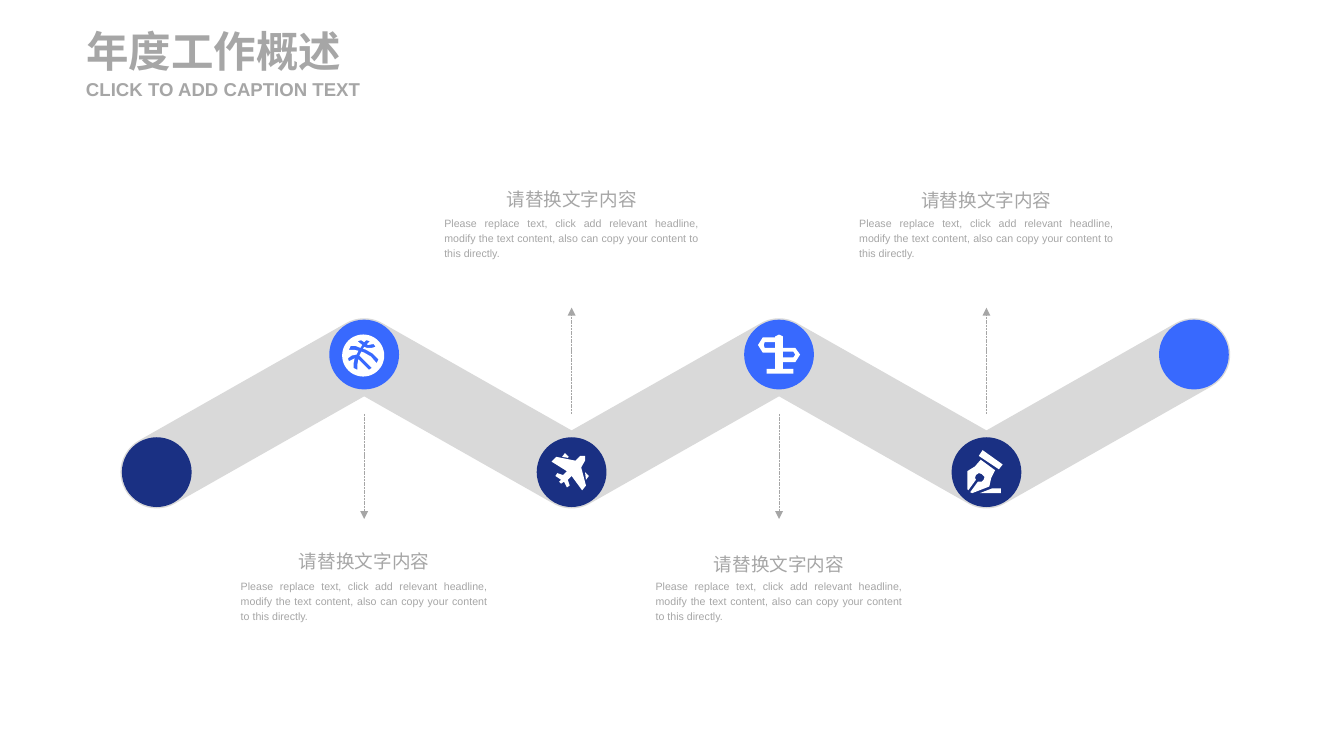
"""Build the annual work overview slide with a zigzag road and four captions."""
import math

import pptx
import pptx.dml.color
import pptx.enum.dml
import pptx.enum.shapes
import pptx.enum.text
import pptx.oxml
import pptx.oxml.ns
import pptx.util

Inches = pptx.util.Inches
Align = pptx.enum.text.PP_ALIGN
COLOURS = {"grey": "A6A6A6", "road": "D9D9D9", "navy": "1A3083", "blue": "3869FE", "white": "FFFFFF"}
HEADING = "请替换文字内容"
BODY = ("Please replace text, click add relevant headline, modify the text content, "
        "also can copy your content to this directly.")

START_X, STEP, PEAK_Y, VALLEY_Y = 1.64, 2.17, 3.71, 4.94
STOPS = [(START_X + STEP * i, PEAK_Y if i % 2 else VALLEY_Y) for i in range(6)]
ROAD_RADIUS, STOP_SIZE = 0.38, 0.73
ARROW_START, ARROW_DOWN, ARROW_UP = 4.33, 5.43, 3.22
HEADING_TOPS = [5.66, 1.87, 5.69, 1.88]


def arc(centre, radius, start, end, steps=24):
    """Return points along a circle between two angles in degrees."""
    angles = [math.radians(start + (end - start) * i / steps) for i in range(steps + 1)]
    return [(centre[0] + radius * math.cos(a), centre[1] + radius * math.sin(a)) for a in angles]


def road_outline():
    """Return the outline of the road, round outside each bend and sharp inside."""
    slope = math.atan2(VALLEY_Y - PEAK_Y, STEP)
    tilt, inset = math.degrees(slope), ROAD_RADIUS / math.cos(slope)
    points = arc(STOPS[0], ROAD_RADIUS, 90 - tilt, 270 - tilt)
    for i, (x, y) in enumerate(STOPS[1:-1], 1):
        points += arc((x, y), ROAD_RADIUS, 270 - tilt, 270 + tilt) if i % 2 else [(x, y - inset)]
    points += arc(STOPS[-1], ROAD_RADIUS, 270 - tilt, 450 - tilt)
    for i, (x, y) in reversed(list(enumerate(STOPS[1:-1], 1))):
        points += [(x, y + inset)] if i % 2 else arc((x, y), ROAD_RADIUS, 90 - tilt, 90 + tilt)
    return points


BALL = [
    arc((3.8, 3.72), 0.22, 0, 360, 48),
    [(3.67, 3.62), (3.65, 3.66), (3.7, 3.66), (3.75, 3.67), (3.73, 3.71), (3.68, 3.72), (3.64, 3.75),
     (3.65, 3.78), (3.71, 3.75), (3.7, 3.8), (3.7, 3.85), (3.74, 3.87), (3.74, 3.81), (3.75, 3.76),
     (3.8, 3.81), (3.86, 3.87), (3.89, 3.85), (3.83, 3.79), (3.76, 3.72), (3.78, 3.68), (3.81, 3.69),
     (3.88, 3.73), (3.94, 3.8), (3.96, 3.76), (3.9, 3.7), (3.83, 3.66), (3.8, 3.65), (3.81, 3.63),
     (3.84, 3.64), (3.89, 3.64), (3.93, 3.63), (3.91, 3.6), (3.85, 3.61), (3.84, 3.6), (3.87, 3.57),
     (3.83, 3.56), (3.81, 3.58), (3.78, 3.56), (3.74, 3.57), (3.79, 3.61), (3.77, 3.64), (3.72, 3.62)],
]
PLANE = [
    [(6.12, 4.77), (6.12, 4.82), (6.08, 4.89), (6.13, 5.08), (6.09, 5.13), (5.98, 4.98), (5.94, 5.02),
     (5.96, 5.08), (5.93, 5.1), (5.9, 5.04), (5.87, 5.06), (5.85, 5.04), (5.87, 5.02), (5.81, 4.98),
     (5.83, 4.95), (5.89, 4.97), (5.93, 4.93), (5.77, 4.83), (5.82, 4.78), (6.02, 4.82), (6.07, 4.77)],
    [(6.16, 4.98), (6.12, 4.94), (6.13, 5.02)],
    [(5.91, 4.74), (5.88, 4.78), (5.94, 4.79), (5.95, 4.78)],
]
SIGNPOST = [
    [(8.11, 3.58), (8, 3.58), (7.99, 3.61), (8, 3.64), (8.11, 3.64)],
    [(8.19, 3.64), (8.32, 3.64), (8.37, 3.71), (8.32, 3.79), (8.19, 3.79), (8.19, 3.86), (8.3, 3.86),
     (8.3, 3.91), (8.02, 3.91), (8.02, 3.86), (8.11, 3.86), (8.11, 3.69), (7.98, 3.69), (7.93, 3.61),
     (7.98, 3.53), (8.11, 3.53), (8.11, 3.52), (8.15, 3.5), (8.19, 3.52)],
    [(8.3, 3.68), (8.19, 3.68), (8.19, 3.74), (8.3, 3.74), (8.32, 3.71)],
]
PEN = [
    [(10.13, 5.13), (10.12, 5.12), (10.12, 4.93), (10.2, 4.88), (10.26, 4.81), (10.41, 4.92), (10.37, 5),
     (10.35, 5.09), (10.17, 5.16), (10.15, 5.15), (10.23, 5.04), (10.27, 5.04), (10.29, 5.02),
     (10.3, 4.99), (10.27, 4.96), (10.24, 4.95), (10.21, 4.97), (10.2, 5), (10.21, 5.02)],
    [(10.25, 5.16), (10.47, 5.16), (10.47, 5.11), (10.38, 5.11)],
    [(10.45, 4.91), (10.49, 4.86), (10.28, 4.71), (10.24, 4.77)],
]


class Builder:
    """Hold the style and the current page and add elements to it."""

    def __init__(self, page):
        self.page = page
        self.font = "Arial"

    def colour(self, name):
        """Return a named colour."""
        return pptx.dml.color.RGBColor.from_string(COLOURS[name])

    def paint(self, shape, colour):
        """Give a shape a flat fill without outline or shadow."""
        shape.shadow.inherit = False
        shape.fill.solid()
        shape.fill.fore_color.rgb = self.colour(colour)
        shape.line.fill.background()

    def outline(self, contours, colour):
        """Draw one filled shape from closed contours given in inches."""
        contours = [[(Inches(x), Inches(y)) for x, y in contour] for contour in contours]
        pen = self.page.shapes.build_freeform(*contours[0][0])
        pen.add_line_segments(contours[0][1:], close=True)
        for contour in contours[1:]:
            pen.move_to(*contour[0])
            pen.add_line_segments(contour[1:], close=True)
        self.paint(pen.convert_to_shape(), colour)

    def stop(self, centre, colour):
        """Draw a round stop on the road."""
        left, top = (value - STOP_SIZE / 2 for value in centre)
        kind = pptx.enum.shapes.MSO_SHAPE.ROUNDED_RECTANGLE
        shape = self.page.shapes.add_shape(
            kind, Inches(left), Inches(top), Inches(STOP_SIZE), Inches(STOP_SIZE))
        shape.adjustments[0] = 0.5
        self.paint(shape, colour)

    def arrow(self, x, start, end):
        """Draw a dashed vertical arrow."""
        kind = pptx.enum.shapes.MSO_CONNECTOR.STRAIGHT
        line = self.page.shapes.add_connector(kind, Inches(x), Inches(start), Inches(x), Inches(end))
        line.line.color.rgb = self.colour("grey")
        line.line.width = pptx.util.Pt(0.5)
        line.line.dash_style = pptx.enum.dml.MSO_LINE.SQUARE_DOT
        space = pptx.oxml.ns.nsdecls("a")
        properties = line._element.spPr
        tail = pptx.oxml.parse_xml(f'<a:tailEnd {space} type="triangle"/>')
        properties.find(pptx.oxml.ns.qn("a:ln")).append(tail)
        properties.append(pptx.oxml.parse_xml(f"<a:effectLst {space}/>"))

    def fill_text(self, box, text, size, bold=False, **layout):
        """Put one grey paragraph into a box."""
        frame = box.text_frame
        frame.text = text
        frame.auto_size = pptx.enum.text.MSO_AUTO_SIZE.SHAPE_TO_FIT_TEXT
        para = frame.paragraphs[0]
        para.alignment = layout.pop("alignment", Align.LEFT)
        para.line_spacing = layout.pop("line_spacing", 1.0)
        for name, value in {"word_wrap": True, **layout}.items():
            setattr(frame, name, value)
        span = para.runs[0]
        for name, value in {"name": self.font, "size": pptx.util.Pt(size), "bold": bold}.items():
            setattr(span.font, name, value)
        span.font.color.rgb = self.colour("grey")

    def text(self, left, top, width, height, text, size, **layout):
        """Add a text box."""
        box = self.page.shapes.add_textbox(Inches(left), Inches(top), Inches(width), Inches(height))
        self.fill_text(box, text, size, **layout)

    def title(self, left, top, width, height, text, size, **layout):
        """Move and fill the title placeholder."""
        box = self.page.shapes.title
        place = {"left": left, "top": top, "width": width, "height": height}
        for name, value in place.items():
            setattr(box, name, Inches(value))
        self.fill_text(box, text, size, **layout)


def main():
    """Build and save the deck."""
    deck = pptx.Presentation()
    deck.slide_width, deck.slide_height = Inches(14.06), Inches(7.91)
    builder = Builder(deck.slides.add_slide(deck.slide_layouts[5]))

    flush = {"margin_left": 0, "margin_right": 0, "margin_top": 0, "margin_bottom": 0,
             "vertical_anchor": pptx.enum.text.MSO_ANCHOR.MIDDLE, "bold": True}
    builder.title(0.9, 0.26, 3.07, 0.54, "年度工作概述", 32, **flush)
    builder.text(0.9, 0.81, 3.07, 0.24, "CLICK TO ADD CAPTION TEXT", 14, **flush)

    builder.outline([road_outline()], "road")
    for i, centre in enumerate(STOPS):
        builder.stop(centre, "blue" if i % 2 else "navy")
    for icon in (BALL, PLANE, SIGNPOST, PEN):
        builder.outline(icon, "white")

    for (x, y), heading_top in zip(STOPS[1:-1], HEADING_TOPS):
        peak = y == PEAK_Y
        builder.arrow(x, ARROW_START, ARROW_DOWN if peak else ARROW_UP)
        builder.text(x - 0.79, heading_top, 1.58, 0.36, HEADING, 14,
                     alignment=Align.CENTER, line_spacing=1.2, word_wrap=False)
        width, top = (2.78, 5.99) if peak else (2.86, 2.19)
        builder.text(x - width / 2, top, width, 0.57, BODY, 8,
                     alignment=Align.JUSTIFY, line_spacing=1.2)

    deck.save("out.pptx")


if __name__ == "__main__":
    main()
